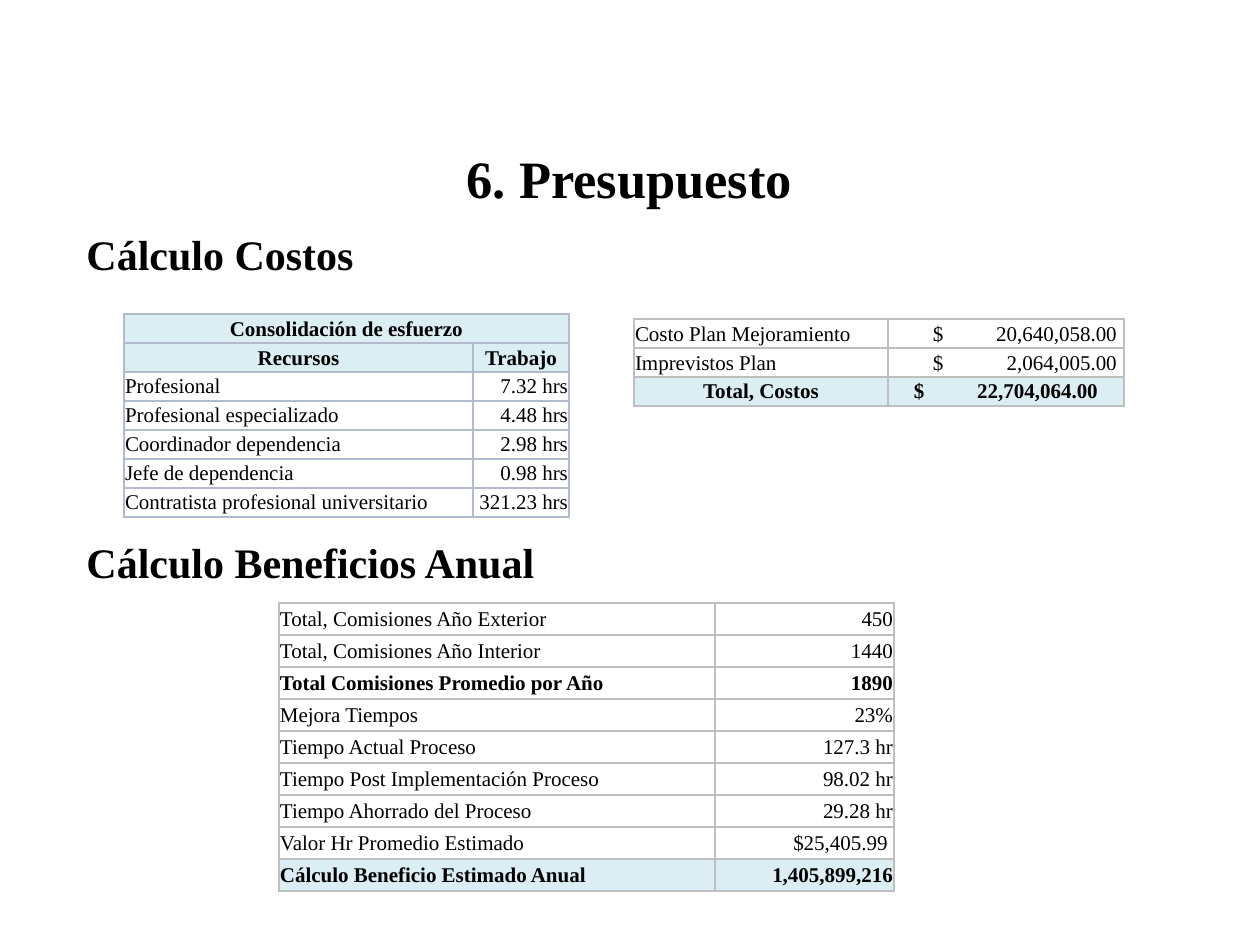
import dataclasses
import lxml.etree
import pptx
import pptx.dml.color
import pptx.enum.text
import pptx.oxml
import pptx.oxml.ns
import pptx.util

ALIGN = pptx.enum.text.PP_ALIGN
MIDDLE = pptx.enum.text.MSO_ANCHOR.MIDDLE
LEFT, RIGHT, CENTER, FULL = ALIGN.LEFT, ALIGN.RIGHT, ALIGN.CENTER, ALIGN.JUSTIFY


def px(size):
    return pptx.util.Emu(round(size * 914400 / 126))


def node(parent, tag, **attrs):
    return lxml.etree.SubElement(parent, pptx.oxml.ns.qn(tag), attrs)


@dataclasses.dataclass
class Theme:
    face: str = "Times New Roman"
    ink: str = "000000"
    tint: str = "DBEEF4"
    blue: str = "B1BBCC"
    gray: str = "BFBFBF"
    title: int = 30
    head: int = 24
    body: int = 12


@dataclasses.dataclass
class Row:
    cells: tuple
    bold: bool = False
    fill: bool = False
    align: tuple = None
    inset: int = 1


class Deck:
    def __init__(self, theme):
        self.theme = theme
        self.file = pptx.Presentation()
        self.file.slide_width = px(1260)
        self.file.slide_height = px(945)
        self.slide = self.file.slides.add_slide(self.file.slide_layouts[6])

    def label(self, para, text, size, bold, align):
        para.text = text
        para.alignment = align
        if "\t" in text:
            tabs = node(para._p.get_or_add_pPr(), "a:tabLst")
            node(tabs, "a:tab", pos=str(px(184)), algn="r")
        font = para.font
        font.name = self.theme.face
        font.size = pptx.util.Pt(size)
        font.bold = bold
        font.color.rgb = pptx.dml.color.RGBColor.from_string(self.theme.ink)

    def text(self, text, left, top, width, height, size, align=LEFT):
        box = self.slide.shapes.add_textbox(px(left), px(top), px(width), px(height))
        frame = box.text_frame
        frame.word_wrap = True
        frame.vertical_anchor = MIDDLE
        self.label(frame.paragraphs[0], text, size, True, align)

    def border(self, cell, color):
        props = cell._tc.get_or_add_tcPr()
        for side in ("a:lnL", "a:lnR", "a:lnT", "a:lnB"):
            line = node(props, side, w=str(pptx.util.Pt(1)))
            node(node(line, "a:solidFill"), "a:srgbClr", val=color)

    def table(self, rows, left, top, widths, pitch, color, align):
        frame = self.slide.shapes.add_table(
            len(rows), len(widths), px(left), px(top),
            px(sum(widths)), px(pitch * len(rows)))
        grid = frame.table
        grid.first_row = grid.horz_banding = False
        for col, width in zip(grid.columns, widths):
            col.width = px(width)
        for i, row in enumerate(rows):
            grid.rows[i].height = px(pitch)
            for j in range(len(widths)):
                cell = grid.cell(i, j)
                self.border(cell, color)
                cell.margin_left = px(row.inset if j else 1)
                cell.margin_right = cell.margin_top = px(1)
                cell.margin_bottom = 0
                cell.vertical_anchor = MIDDLE
                if row.fill:
                    cell.fill.solid()
                    cell.fill.fore_color.rgb = pptx.dml.color.RGBColor.from_string(self.theme.tint)
                else:
                    cell.fill.background()
                if j < len(row.cells):
                    self.label(cell.text_frame.paragraphs[0], row.cells[j],
                               self.theme.body, row.bold, (row.align or align)[j])
            if len(row.cells) < len(widths):
                grid.cell(i, 0).merge(grid.cell(i, len(widths) - 1))


EFFORT = [
    Row(("Consolidación de esfuerzo",), True, True, (CENTER, CENTER)),
    Row(("Recursos", "Trabajo"), True, True, (CENTER, CENTER)),
    Row(("Profesional", "7.32 hrs")),
    Row(("Profesional especializado", "4.48 hrs")),
    Row(("Coordinador dependencia", "2.98 hrs")),
    Row(("Jefe de dependencia", "0.98 hrs")),
    Row(("Contratista profesional universitario", "321.23 hrs")),
]
COSTS = [
    Row(("Costo Plan Mejoramiento", "$\t20,640,058.00"), inset=45),
    Row(("Imprevistos Plan", "$\t2,064,005.00"), inset=45),
    Row(("Total, Costos", "$\t22,704,064.00"), True, True, (CENTER, LEFT), 26),
]
GAINS = [
    Row(("Total, Comisiones Año Exterior", "450")),
    Row(("Total, Comisiones Año Interior", "1440")),
    Row(("Total Comisiones Promedio por Año", "1890"), True),
    Row(("Mejora Tiempos", "23%")),
    Row(("Tiempo Actual Proceso", "127.3 hr")),
    Row(("Tiempo Post Implementación Proceso", "98.02 hr")),
    Row(("Tiempo Ahorrado del Proceso", "29.28 hr")),
    Row(("Valor Hr Promedio Estimado", "$25,405.99 ")),
    Row(("Cálculo Beneficio Estimado Anual", "1,405,899,216"), True, True),
]


def main():
    theme = Theme()
    deck = Deck(theme)
    deck.text("6. Presupuesto", 94, 121, 1071, 114, theme.title, CENTER)
    deck.text("Cálculo Costos", 74, 204, 1101, 100, theme.head)
    deck.table(EFFORT, 124, 314, (349, 96), 29, theme.blue, (LEFT, RIGHT))
    deck.table(COSTS, 634, 319, (254, 236), 29, theme.gray, (FULL, LEFT))
    deck.table(GAINS, 279, 603, (436, 179), 32, theme.gray, (LEFT, RIGHT))
    deck.text("Cálculo Beneficios Anual", 74, 512, 1101, 100, theme.head)
    deck.file.save("out.pptx")


if __name__ == "__main__":
    main()
